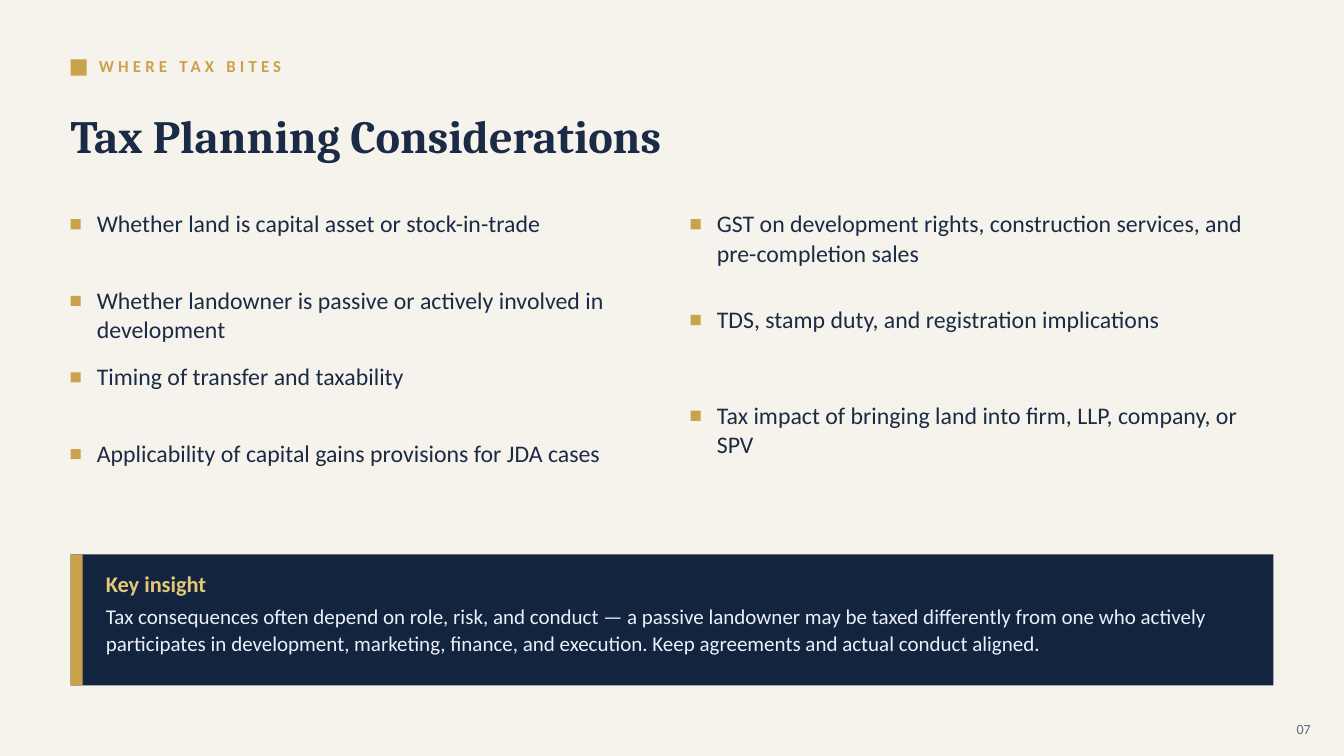
from lxml import etree
from pptx import Presentation
from pptx.dml.color import RGBColor
from pptx.enum.shapes import MSO_SHAPE
from pptx.enum.text import MSO_ANCHOR as ANCHOR, MSO_AUTO_SIZE as AUTOSIZE, PP_ALIGN as ALIGN
from pptx.oxml.ns import qn
from pptx.util import Inches, Pt

COLORS = {
    "paper": "F6F3EC", "gold": "C9A24B", "pale_gold": "E2C779", "ink": "1B2A45",
    "navy": "13243F", "ice": "EAF0FA", "slate": "5C6B82",
}
FORMATS = {
    "kicker": {"name": "Calibri", "size": Pt(12), "bold": True, "color": "gold"},
    "title": {"name": "Cambria", "size": Pt(33), "bold": True, "color": "ink"},
    "point": {"name": "Calibri", "size": Pt(17), "bold": False, "color": "ink"},
    "heading": {"name": "Calibri", "size": Pt(16), "bold": True, "color": "pale_gold"},
    "insight": {"name": "Calibri", "size": Pt(15), "bold": False, "color": "ice"},
    "number": {"name": "Calibri", "size": Pt(10), "bold": False, "color": "slate"},
}
# Each point comes with the number of lines it fills
LEFT_POINTS = [
    ("Whether land is capital asset or stock-in-trade", 1),
    ("Whether landowner is passive or actively involved in development", 2),
    ("Timing of transfer and taxability", 1),
    ("Applicability of capital gains provisions for JDA cases", 1),
]
RIGHT_POINTS = [
    ("GST on development rights, construction services, and pre-completion sales", 2),
    ("TDS, stamp duty, and registration implications", 1),
    ("Tax impact of bringing land into firm, LLP, company, or SPV", 2),
]
INSIGHT = (
    "Tax consequences often depend on role, risk, and conduct — a passive landowner may be "
    "taxed differently from one who actively participates in development, marketing, finance, "
    "and execution. Keep agreements and actual conduct aligned."
)
MARGIN = 0.7
POINT_LINE = 21.15  # points, height of one line of a list
POINT_INDENT = 0.26
MARKER = 0.1


def rgb(color):
    return RGBColor.from_string(COLORS[color])


def place(shape, left, top, width, height):
    shape.left, shape.top = Inches(left), Inches(top)
    shape.width, shape.height = Inches(width), Inches(height)


def prepare_frame(shape, anchor):
    frame = shape.text_frame
    settings = {
        "word_wrap": True, "auto_size": AUTOSIZE.NONE, "vertical_anchor": anchor,
        "margin_left": 0, "margin_top": 0, "margin_right": 0, "margin_bottom": 0,
    }
    for key, value in settings.items():
        setattr(frame, key, value)
    return frame


def write(paragraph, text, style):
    run = paragraph.add_run()
    run.text = text
    for key, value in FORMATS[style].items():
        if key == "color":
            run.font.color.rgb = rgb(value)
        else:
            setattr(run.font, key, value)
    return run


def add_label(slide, box, text, style, anchor=ANCHOR.MIDDLE, align=ALIGN.LEFT, spacing=None):
    label = slide.shapes.add_textbox(*map(Inches, box))
    paragraph = prepare_frame(label, anchor).paragraphs[0]
    paragraph.alignment = align
    paragraph.line_spacing = spacing
    return write(paragraph, text, style)


def add_block(slide, box, color):
    block = slide.shapes.add_shape(MSO_SHAPE.RECTANGLE, *map(Inches, box))
    block.shadow.inherit = False
    block.fill.solid()
    block.fill.fore_color.rgb = rgb(color)
    block.line.fill.background()


def add_header(slide, left, top, width):
    add_block(slide, (left, top + 0.11, 0.16, 0.16), "gold")
    kicker = add_label(slide, (left + 0.28, top, 9, 0.34), "WHERE TAX BITES", "kicker")
    kicker.font._element.set("spc", "300")
    title = slide.shapes.title
    place(title, left, top + 0.4, width, 0.92)
    paragraph = prepare_frame(title, ANCHOR.MIDDLE).paragraphs[0]
    paragraph.alignment = ALIGN.LEFT
    write(paragraph, "Tax Planning Considerations", "title")


def remove_bullet(paragraph):
    properties = paragraph._p.get_or_add_pPr()
    properties.set("marL", "0")
    properties.set("indent", "0")
    etree.SubElement(properties, qn("a:buNone"))


def fill_list(slide, placeholder, left, top, width, pitch, points):
    """Start the points, each with a square marker, at equal steps of pitch."""
    place(placeholder, left + POINT_INDENT, top, width - POINT_INDENT, pitch * len(points))
    frame = prepare_frame(placeholder, ANCHOR.TOP)
    gap = 0
    for index, (text, lines) in enumerate(points):
        add_block(slide, (left, top + index * pitch + 0.115, MARKER, MARKER), "gold")
        paragraph = frame.add_paragraph() if index else frame.paragraphs[0]
        paragraph.alignment = ALIGN.LEFT
        paragraph.line_spacing = 1.04
        paragraph.space_before = Pt(gap)
        paragraph.space_after = Pt(0)
        remove_bullet(paragraph)
        write(paragraph, text, "point")
        gap = pitch * 72 - lines * POINT_LINE


def add_insight(slide, left, top, width, height):
    add_block(slide, (left, top, width, height), "navy")
    add_block(slide, (left, top, 0.12, height), "gold")
    text_left = left + 0.35
    add_label(slide, (text_left, top + 0.12, 11, 0.34), "Key insight", "heading")
    add_label(slide, (text_left, top + 0.46, 11.3, 0.8), INSIGHT, "insight",
              anchor=ANCHOR.TOP, spacing=1.1)


def main():
    deck = Presentation()
    deck.slide_width, deck.slide_height = Inches(13.33), Inches(7.5)
    slide = deck.slides.add_slide(deck.slide_layouts.get_by_name("Two Content"))
    slide.background.fill.solid()
    slide.background.fill.fore_color.rgb = rgb("paper")

    add_header(slide, MARGIN, 0.48, 11.95)
    left_list, right_list = list(slide.placeholders)[1:]
    fill_list(slide, left_list, MARGIN, 2.06, 5.85, 0.76, LEFT_POINTS)
    fill_list(slide, right_list, 6.85, 2.06, 5.78, 0.95, RIGHT_POINTS)
    add_insight(slide, MARGIN, 5.5, 11.93, 1.3)
    add_label(slide, (12.4, 7.08, 0.6, 0.3), "07", "number", align=ALIGN.RIGHT)
    deck.save("out.pptx")


if __name__ == "__main__":
    main()
